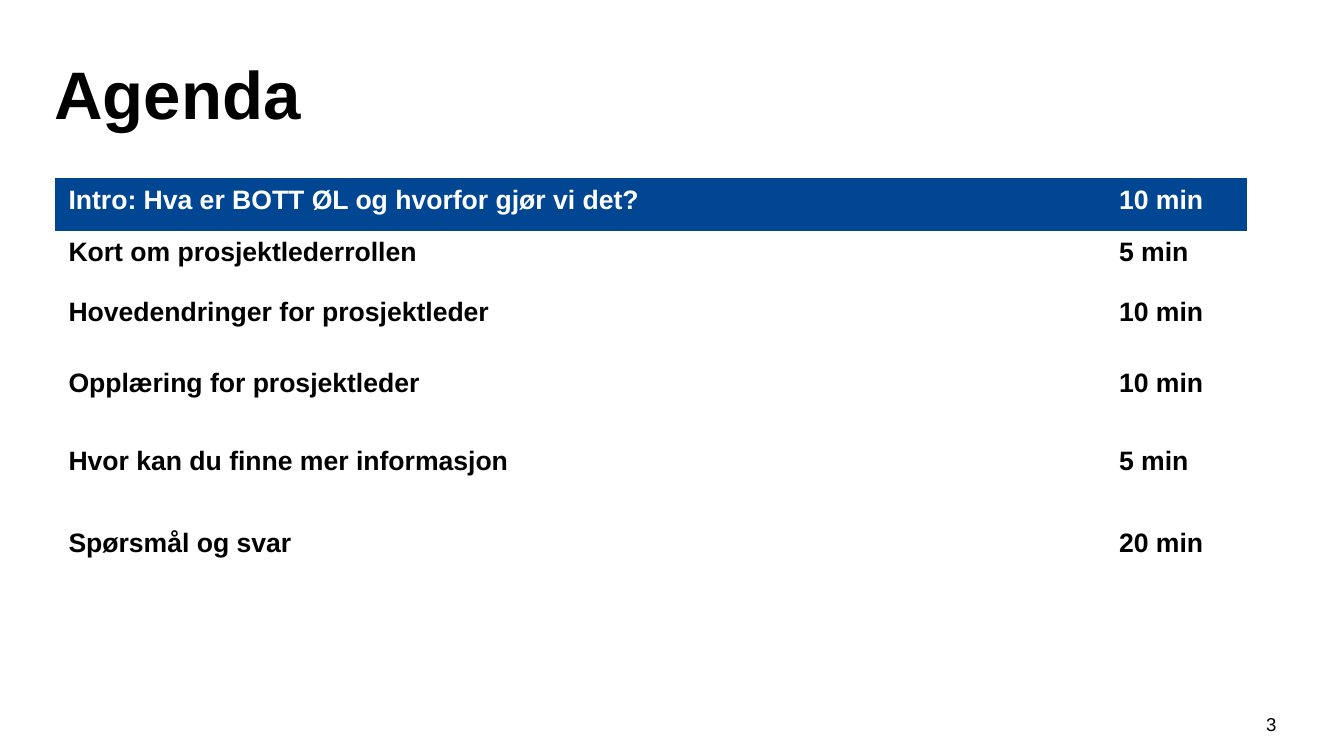
from pptx import Presentation
from pptx.dml.color import RGBColor
from pptx.enum.text import MSO_ANCHOR, PP_ALIGN
from pptx.util import Inches, Pt

BLACK = RGBColor(0x00, 0x00, 0x00)
WHITE = RGBColor(0xFF, 0xFF, 0xFF)
BLUE = RGBColor(0x01, 0x46, 0x93)
FONT = "Arial"

# Topic, duration, row height in inches
AGENDA = [
    ("Intro: Hva er BOTT ØL og hvorfor gjør vi det?", "10 min", 0.52),
    ("Kort om prosjektlederrollen", "5 min", 0.59),
    ("Hovedendringer for prosjektleder", "10 min", 0.71),
    ("Opplæring for prosjektleder", "10 min", 0.77),
    ("Hvor kan du finne mer informasjon", "5 min", 0.81),
    ("Spørsmål og svar", "20 min", 0.73),
]
WIDTHS = (10.42, 1.4)


def add_run(para, text, size, color=BLACK, bold=False):
    run = para.add_run()
    run.text = text
    font = run.font
    font.name = FONT
    font.size = Pt(size)
    font.bold = bold
    font.color.rgb = color


def add_text(slide, box, text, size, bold=False,
             align=PP_ALIGN.LEFT, anchor=MSO_ANCHOR.TOP):
    frame = slide.shapes.add_textbox(*map(Inches, box)).text_frame
    frame.word_wrap = True
    frame.vertical_anchor = anchor
    para = frame.paragraphs[0]
    para.alignment = align
    add_run(para, text, size, bold=bold)


def fill_cell(cell, text, color, fill):
    cell.margin_left = cell.margin_right = Inches(0.13)
    cell.margin_top = cell.margin_bottom = Inches(0.07)
    cell.fill.solid()
    cell.fill.fore_color.rgb = fill
    add_run(cell.text_frame.paragraphs[0], text, 19, color, bold=True)


def add_agenda(slide, left, top):
    """Add the agenda table with its first topic highlighted."""
    height = sum(item[2] for item in AGENDA)
    frame = slide.shapes.add_table(
        len(AGENDA), len(WIDTHS), Inches(left), Inches(top),
        Inches(sum(WIDTHS)), Inches(height))
    table = frame.table
    table.first_row = table.horz_banding = False
    for column, width in zip(table.columns, WIDTHS):
        column.width = Inches(width)
    for index, (topic, time, tall) in enumerate(AGENDA):
        row = table.rows[index]
        row.height = Inches(tall)
        color, fill = (WHITE, BLUE) if index == 0 else (BLACK, WHITE)
        for cell, text in zip(row.cells, (topic, time)):
            fill_cell(cell, text, color, fill)
    # The plain "No Style, No Grid" table style draws no borders
    style = table._tbl.tblPr.find("{*}tableStyleId")
    style.text = "{2D5ABB26-0587-4C30-8999-92F81FD0307C}"


def main():
    deck = Presentation()
    deck.slide_width = Inches(13.33)
    deck.slide_height = Inches(7.5)
    slide = deck.slides.add_slide(deck.slide_layouts[6])
    add_text(slide, (0.44, 0.44, 12.28, 0.95), "Agenda", 48, bold=True,
             anchor=MSO_ANCHOR.MIDDLE)
    add_agenda(slide, 0.55, 1.77)
    add_text(slide, (12.36, 7.02, 0.5, 0.4), "3", 13.3,
             align=PP_ALIGN.CENTER)
    deck.save("out.pptx")


if __name__ == "__main__":
    main()
